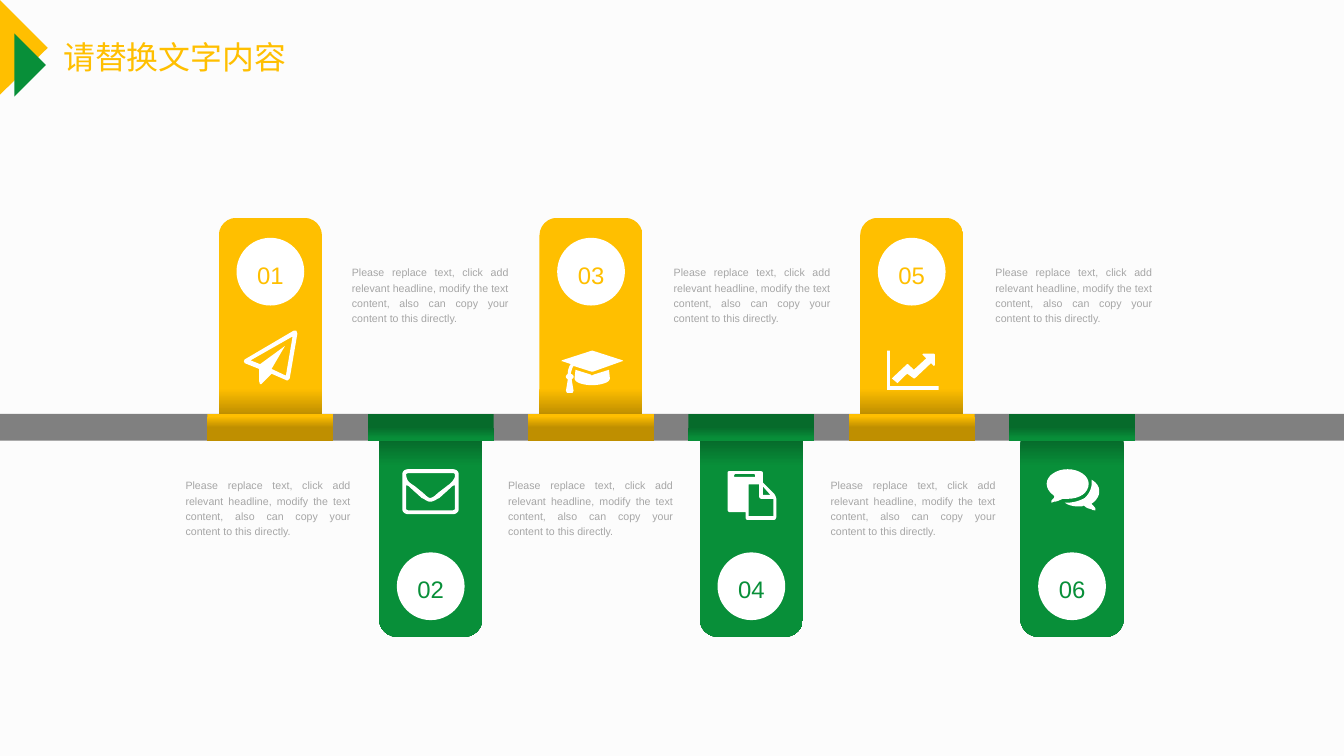
"""Build a six-step timeline slide with alternating tabs above and below a bar."""
import pptx
import pptx.dml.color
import pptx.enum.shapes
import pptx.enum.text
import pptx.util

Cm = pptx.util.Cm
Pt = pptx.util.Pt
PRESETS = pptx.enum.shapes.MSO_SHAPE
ALIGN = pptx.enum.text.PP_ALIGN
ANCHOR = pptx.enum.text.MSO_ANCHOR

TITLE = "请替换文字内容"
CAPTION = ("Please replace text, click add relevant headline, modify the text content, "
           "also can copy your content to this directly.")
YELLOW, GREEN, WHITE = "FFBF00", "088F39", "FFFFFF"
DARK_YELLOW, DARK_GREEN = "BF8F00", "066B2B"
BACKGROUND, BAR_GREY, TEXT_GREY = "FCFCFC", "808080", "A6A6A6"

# Outlines are in hundredths of an inch; six numbers make a curve, two make a line.
PLANE = [
    [(56, 3), (48, 50), (46, 52), (45, 52), (29, 45), (19, 55), (18, 56), (17, 56), (16, 53),
     (16, 40), (1, 34), (0, 32), (1, 30), (52, 0), (55, 0)],
    [(51, 6), (7, 31), (17, 35), (43, 16), (29, 40), (44, 47)],
]
ENVELOPE = [
    [(59, 42), (59, 44, 57, 47, 53, 47), (6, 47), (2, 47, 0, 44, 0, 42), (0, 5),
     (0, 3, 2, 0, 6, 0), (53, 0), (57, 0, 59, 3, 59, 5)],
    [(53, 4), (6, 4), (4, 5), (4, 10, 6, 13, 9, 15), (14, 18, 18, 22, 22, 25),
     (24, 27, 27, 30, 29, 30), (32, 30, 35, 27, 37, 25), (41, 22, 46, 18, 50, 15),
     (52, 13, 55, 10, 55, 7), (55, 6, 55, 4, 53, 4)],
    [(55, 17), (54, 17, 53, 17, 52, 18), (48, 22, 43, 26, 39, 30), (36, 31, 33, 34, 29, 34),
     (26, 34, 23, 31, 20, 30), (16, 26, 11, 22, 7, 18), (6, 17, 5, 17, 4, 17), (4, 42),
     (6, 43), (53, 43), (55, 42)],
]
CAP = [
    [(64, 11), (33, 22), (32, 22), (13, 16), (12, 17, 11, 20, 10, 24), (12, 25, 13, 26, 13, 27),
     (13, 29, 12, 29, 11, 30), (13, 42), (12, 44), (6, 44), (5, 42), (7, 30),
     (6, 29, 5, 29, 5, 27), (5, 26, 6, 25, 7, 24), (7, 20, 8, 17, 10, 14), (1, 11), (0, 11),
     (1, 10), (32, 0), (33, 0), (64, 10), (65, 11)],
    [(51, 29), (51, 33, 43, 36, 32, 36), (22, 36, 14, 33, 14, 29), (15, 20), (31, 25),
     (32, 26), (34, 25), (50, 20)],
]
PAGES = [
    [(51, 48), (51, 49, 50, 51, 49, 51), (21, 51), (19, 51, 19, 49, 19, 48), (19, 43), (3, 43),
     (1, 43, 0, 42, 0, 40), (0, 2), (0, 0, 1, 0, 3, 0), (34, 0), (35, 0, 37, 0, 37, 2),
     (37, 12), (49, 24), (50, 25, 51, 28, 51, 29)],
    [(29, 4), (28, 3), (8, 3), (7, 4), (7, 6), (29, 6)],
    [(48, 47), (48, 29), (36, 29), (34, 29, 33, 28, 33, 26), (33, 14), (22, 14), (22, 47)],
    [(45, 25), (37, 16), (37, 25)],
]
GROWTH = [
    [(54, 41), (0, 41), (0, 0), (3, 0), (3, 37), (54, 37)],
    [(50, 15), (49, 16), (46, 13), (29, 29), (28, 29), (21, 24), (11, 34), (5, 29), (21, 14),
     (22, 14), (28, 20), (41, 8), (37, 4), (38, 3), (49, 3), (50, 4)],
]
BUBBLES = [
    [(22, 31), (20, 31, 18, 31, 17, 31), (14, 32, 11, 34, 8, 34), (7, 34, 6, 35, 5, 35),
     (5, 33), (6, 31, 8, 31, 8, 28), (4, 25, 0, 21, 0, 15), (0, 7, 10, 0, 22, 0),
     (34, 0, 44, 7, 44, 15), (44, 25, 34, 31, 22, 31)],
    [(47, 36), (48, 38, 50, 39, 51, 41), (51, 43), (50, 43, 48, 43, 47, 42),
     (44, 41, 42, 41, 39, 38), (37, 39, 36, 39, 34, 39), (28, 39, 23, 38, 19, 35), (22, 35),
     (28, 35, 35, 33, 40, 30), (44, 26, 47, 21, 47, 15), (47, 14, 47, 12, 47, 11),
     (52, 14, 55, 18, 55, 23), (55, 28, 52, 33, 47, 36)],
]
STEPS = [
    ("01", PLANE, 6.48, 8.79), ("02", ENVELOPE, 10.69, 12.47), ("03", CAP, 14.91, 9.32),
    ("04", PAGES, 19.33, 12.52), ("05", GROWTH, 23.57, 9.32), ("06", BUBBLES, 27.81, 12.47),
]
CORNER_TRIANGLES = [
    ([[(0, 0), (50, 50), (0, 99)]], 0, 0, YELLOW),
    ([[(0, 0), (33, 33), (0, 66)]], 0.38, 0.89, GREEN),
]
UPPER = {
    "color": YELLOW, "tab_top": 5.79, "circle_top": 6.32, "corners": (0.17, 0),
    "base_stops": [(0.09, YELLOW), (0.5, DARK_YELLOW)],
    "tab_stops": [(0.87, YELLOW), (1, DARK_YELLOW)],
    "caption": (4.93, 8.57, 12.67, 4.39),
}
LOWER = {
    "color": GREEN, "tab_top": 11.71, "circle_top": 14.68, "corners": (0, 0.17),
    "base_stops": [(0.5, DARK_GREEN), (0.91, GREEN)],
    "tab_stops": [(0, DARK_GREEN), (0.13, GREEN)],
    "caption": (9.35, 8.55, 7.01, 4.17),
}
SLIDE_WIDTH, SLIDE_HEIGHT = 35.71, 20.09
BAR_TOP, BAR_HEIGHT = 11, 0.71
FIRST_BASE, STEP_PITCH, BASE_WIDTH = 5.51, 4.26, 3.35
TAB_WIDTH, TAB_HEIGHT, CIRCLE_SIZE = 2.74, 5.21, 1.8


def rgb(color):
    return pptx.dml.color.RGBColor.from_string(color)


def paint(shape, color):
    shape.shadow.inherit = False
    shape.line.fill.background()
    shape.fill.solid()
    shape.fill.fore_color.rgb = rgb(color)


def paint_gradient(shape, stops):
    shape.shadow.inherit = False
    shape.line.fill.background()
    shape.fill.gradient()
    shape.fill.gradient_angle = 270
    for stop, (position, color) in zip(shape.fill.gradient_stops, stops):
        stop.position = position
        stop.color.rgb = rgb(color)


def add_preset(slide, preset, *box):
    return slide.shapes.add_shape(preset, *(Cm(length) for length in box))


def write(shape, text, size, color, alignment, anchor):
    frame = shape.text_frame
    frame.text = text
    frame.word_wrap = True
    frame.auto_size = pptx.enum.text.MSO_AUTO_SIZE.NONE
    frame.vertical_anchor = anchor
    paragraph = frame.paragraphs[0]
    paragraph.alignment = alignment
    paragraph.line_spacing = 1.2
    font = paragraph.runs[0].font
    font.name, font.size, font.color.rgb = "Arial", Pt(size), rgb(color)


def remove_margins(shape):
    frame = shape.text_frame
    frame.margin_left = frame.margin_right = frame.margin_top = frame.margin_bottom = 0


def flatten(contour):
    points = [contour[0]]
    for segment in contour[1:]:
        if len(segment) == 2:
            points.append(segment)
            continue
        x0, y0 = points[-1]
        x1, y1, x2, y2, x3, y3 = segment
        for t in (step / 8 for step in range(1, 9)):
            a, b, c, d = (1 - t) ** 3, 3 * t * (1 - t) ** 2, 3 * t * t * (1 - t), t ** 3
            points.append((a * x0 + b * x1 + c * x2 + d * x3, a * y0 + b * y1 + c * y2 + d * y3))
    return [(x * 10, y * 10) for x, y in points]


def add_outline(slide, contours, left, top, color):
    first, *others = [flatten(contour) for contour in contours]
    builder = slide.shapes.build_freeform(*first[0], scale=Cm(2.54) / 1000)
    builder.add_line_segments(first[1:], close=True)
    for points in others:
        builder.move_to(*points[0])
        builder.add_line_segments(points[1:], close=True)
    paint(builder.convert_to_shape(Cm(left), Cm(top)), color)


def add_step(slide, index, number, icon, icon_left, icon_top):
    row = LOWER if index % 2 else UPPER
    base_left = FIRST_BASE + index * STEP_PITCH
    center = base_left + BASE_WIDTH / 2
    base = add_preset(slide, PRESETS.RECTANGLE, base_left, BAR_TOP, BASE_WIDTH, BAR_HEIGHT)
    paint_gradient(base, row["base_stops"])
    tab = add_preset(slide, PRESETS.ROUND_2_SAME_RECTANGLE, center - TAB_WIDTH / 2,
                     row["tab_top"], TAB_WIDTH, TAB_HEIGHT)
    tab.adjustments[0], tab.adjustments[1] = row["corners"]
    paint_gradient(tab, row["tab_stops"])
    circle = add_preset(slide, PRESETS.OVAL, center - CIRCLE_SIZE / 2, row["circle_top"],
                        CIRCLE_SIZE, CIRCLE_SIZE)
    paint(circle, WHITE)
    write(circle, number, 18, row["color"], ALIGN.CENTER, ANCHOR.MIDDLE)
    add_outline(slide, icon, icon_left, icon_top, WHITE)
    first_left, pitch, top, width = row["caption"]
    caption = slide.shapes.add_textbox(Cm(first_left + index // 2 * pitch), Cm(top),
                                       Cm(width), Cm(1.6))
    write(caption, CAPTION, 8, TEXT_GREY, ALIGN.JUSTIFY, ANCHOR.TOP)
    caption.text_frame.paragraphs[0].space_before = Pt(1.6)
    remove_margins(caption)


def main():
    presentation = pptx.Presentation()
    presentation.slide_width, presentation.slide_height = Cm(SLIDE_WIDTH), Cm(SLIDE_HEIGHT)
    slide = presentation.slides.add_slide(presentation.slide_layouts[5])
    slide.background.fill.solid()
    slide.background.fill.fore_color.rgb = rgb(BACKGROUND)
    title = slide.shapes.title
    title.left, title.top, title.width, title.height = Cm(1.68), Cm(0.81), Cm(6), Cm(1.12)
    write(title, TITLE, 24, YELLOW, ALIGN.LEFT, ANCHOR.TOP)
    remove_margins(title)
    bar = add_preset(slide, PRESETS.RECTANGLE, 0, BAR_TOP, SLIDE_WIDTH, BAR_HEIGHT)
    paint(bar, BAR_GREY)
    for index, step in enumerate(STEPS):
        add_step(slide, index, *step)
    for triangle in CORNER_TRIANGLES:
        add_outline(slide, *triangle)
    presentation.save("out.pptx")


if __name__ == "__main__":
    main()
